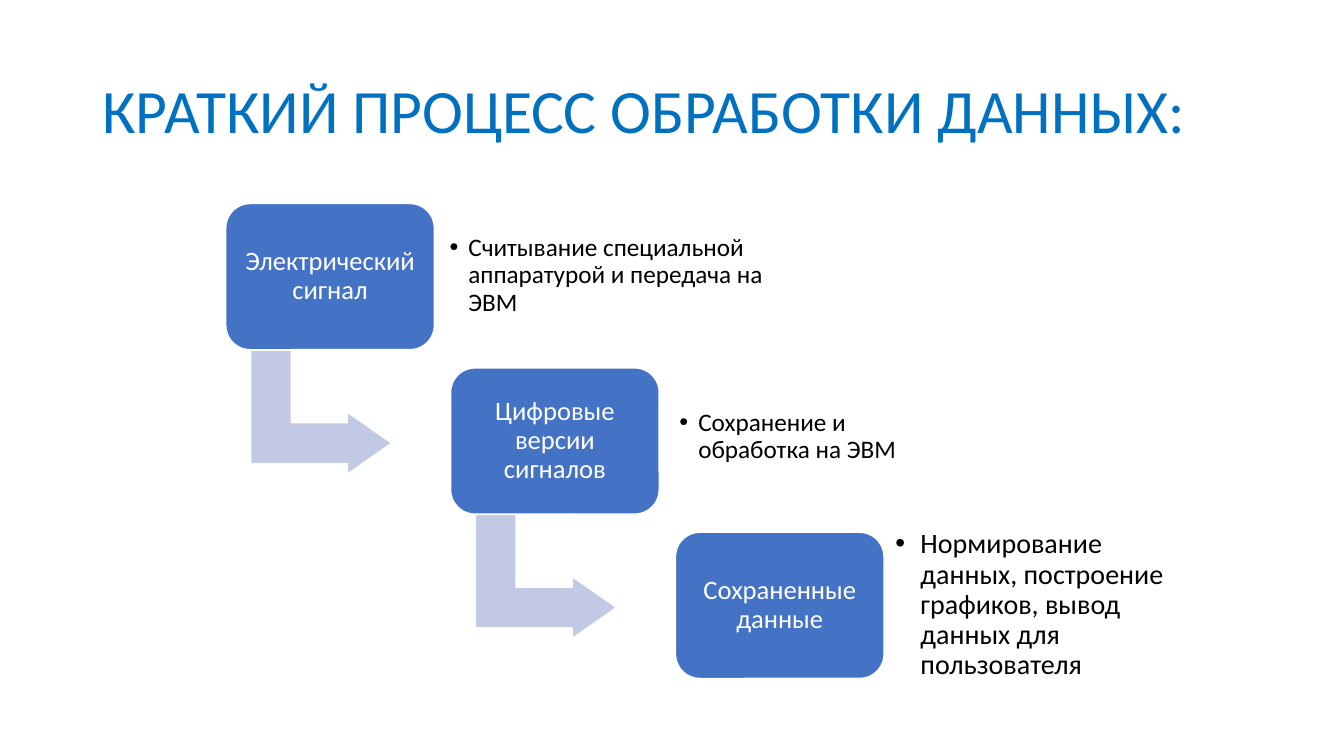
import dataclasses

import pptx
import pptx.dml.color
import pptx.enum.shapes
import pptx.enum.text
import pptx.oxml.ns
import pptx.util
from lxml import etree

Pt = pptx.util.Pt
RGB = pptx.dml.color.RGBColor.from_string
MSO = pptx.enum.shapes.MSO_SHAPE
ALIGN = pptx.enum.text.PP_ALIGN


@dataclasses.dataclass(frozen=True)
class Theme:
    """Colours, font and type sizes of the slide."""
    font: str = "Calibri"
    title: str = "0070C0"
    box: str = "4472C4"
    arrow: str = "C1C9E4"
    white: str = "FFFFFF"
    black: str = "000000"
    title_size: int = 44
    box_size: int = 19
    note_size: int = 18
    last_note_size: int = 20


THEME = Theme()
BOX_W, BOX_H = 149, 104.4
STEP_X, STEP_Y = 160.6, 117.4
STEPS = [
    ("Электрический сигнал", "Считывание специальной аппаратурой и передача на ЭВМ",
     dict(dx=154.8, dy=9.4, width=262, size=THEME.note_size, indent=13.5)),
    ("Цифровые версии сигналов", "Сохранение и обработка на ЭВМ",
     dict(dx=158.4, dy=7.2, width=200, size=THEME.note_size, indent=13.5)),
    ("Сохраненные данные",
     "Нормирование данных, построение графиков, вывод данных для пользователя",
     dict(dx=152, dy=10, width=226, size=THEME.last_note_size, indent=18)),
]


def write(sp, text, size, color, align=ALIGN.LEFT, inset=5.6, indent=0):
    """Fill a shape with one paragraph, bulleted when an indent is given."""
    tf = sp.text_frame
    tf.word_wrap = True
    tf.auto_size = pptx.enum.text.MSO_AUTO_SIZE.NONE
    tf.vertical_anchor = pptx.enum.text.MSO_ANCHOR.MIDDLE
    tf.margin_left = tf.margin_right = tf.margin_top = tf.margin_bottom = Pt(inset)
    p = tf.paragraphs[0]
    p.alignment = align
    p.line_spacing = 0.9
    r = p.add_run()
    r.text = text
    r.font.name = THEME.font
    r.font.size = Pt(size)
    r.font.color.rgb = RGB(color)
    if indent:
        qn = pptx.oxml.ns.qn
        pPr = p._p.get_or_add_pPr()
        pPr.set("marL", str(Pt(indent)))
        pPr.set("indent", str(-Pt(indent)))
        etree.SubElement(pPr, qn("a:buFont")).set("typeface", "Arial")
        etree.SubElement(pPr, qn("a:buChar")).set("char", "•")


def add_block(s, kind, x, y, w, h, fill, adjustments):
    """Add a filled preset shape with a thin white outline."""
    sp = s.shapes.add_shape(kind, Pt(x), Pt(y), Pt(w), Pt(h))
    sp.shadow.inherit = False
    sp.fill.solid()
    sp.fill.fore_color.rgb = RGB(fill)
    sp.line.color.rgb = RGB(THEME.white)
    sp.line.width = Pt(1)
    for i, value in enumerate(adjustments):
        sp.adjustments[i] = value
    return sp


def add_title(s, text, x, y, w, h):
    """Place and write the slide title."""
    sp = s.shapes.title
    sp.left, sp.top, sp.width, sp.height = Pt(x), Pt(y), Pt(w), Pt(h)
    write(sp, text, THEME.title_size, THEME.title, inset=7.2)


def add_arrow(s, x, y):
    """Add the bent arrow that leads down from the box at x, y."""
    sp = add_block(s, MSO.BENT_UP_ARROW, x + 23.8, y + 98.6, 88.6, 100.8,
                   THEME.arrow, (0.328, 0.25, 0.358))
    sp.rotation = 90


def add_note(s, text, x, y, dx, dy, width, size, indent):
    """Add the bulleted note beside the box at x, y."""
    sp = s.shapes.add_textbox(Pt(x + dx), Pt(y + dy), Pt(width), Pt(84.2))
    write(sp, text, size, THEME.black, inset=5, indent=indent)


def add_process(s, x, y):
    """Build the descending staircase of steps from its top left corner."""
    for i, (label, note, note_format) in enumerate(STEPS):
        left, top = x + i * STEP_X, y + i * STEP_Y
        if i < len(STEPS) - 1:
            add_arrow(s, left, top)
        sp = add_block(s, MSO.ROUNDED_RECTANGLE, left, top, BOX_W, BOX_H,
                       THEME.box, (0.167,))
        write(sp, label, THEME.box_size, THEME.white, ALIGN.CENTER)
        add_note(s, note, left, top, **note_format)


def main():
    """Build and save the presentation."""
    prs = pptx.Presentation()
    prs.slide_width, prs.slide_height = Pt(960), Pt(540)
    s = prs.slides.add_slide(prs.slide_layouts[5])
    add_title(s, "КРАТКИЙ ПРОЦЕСС ОБРАБОТКИ ДАННЫХ:", 66, 28.8, 828, 104.4)
    add_process(s, 161.3, 145.4)
    prs.save("out.pptx")


if __name__ == "__main__":
    main()
